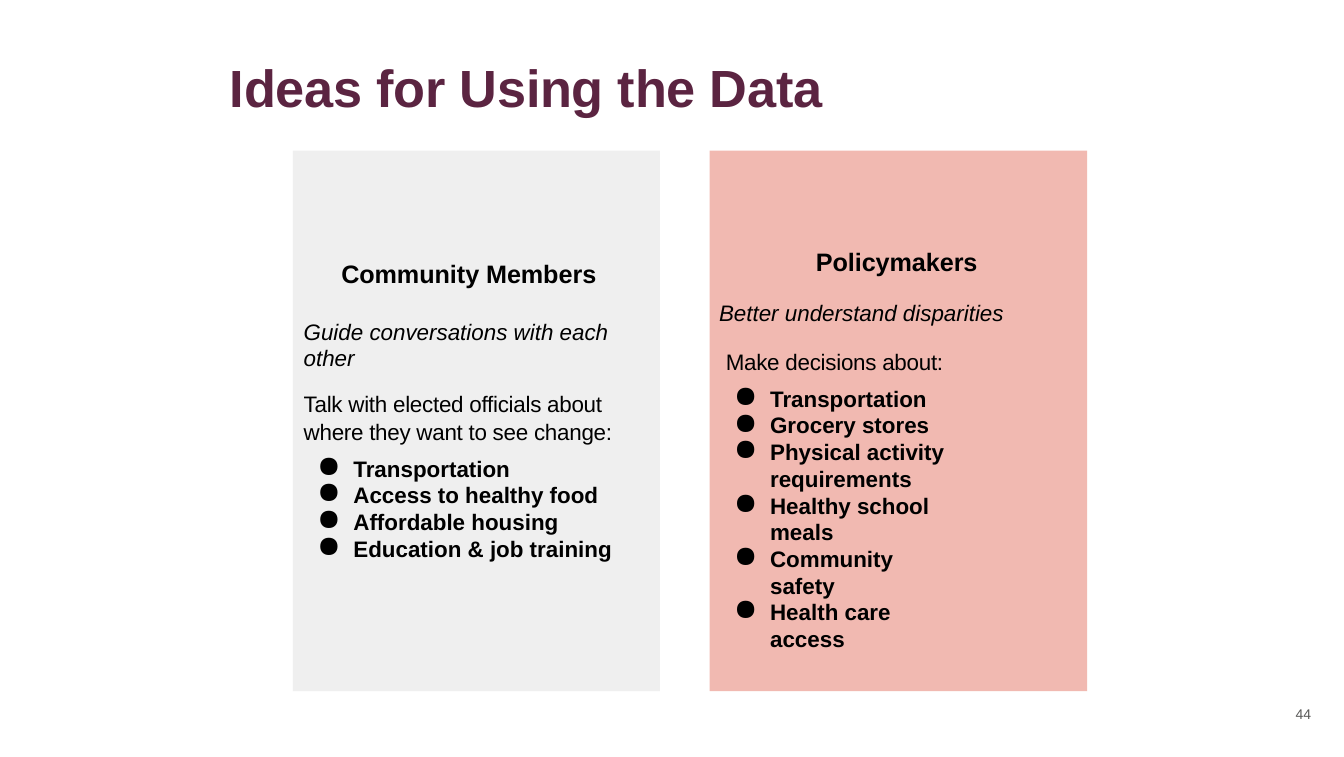
import pptx
import pptx.util
import pptx.dml.color
import pptx.enum.text
import pptx.enum.shapes
import pptx.oxml.ns
import lxml.etree

Inches, Pt = pptx.util.Inches, pptx.util.Pt
qn = pptx.oxml.ns.qn
COLORS = {"plum": "5B2441", "gray": "EFEFEF", "red": "DD503E", "black": "000000", "dim": "595958"}


def rgb(name):
    return pptx.dml.color.RGBColor.from_string(COLORS[name])


def style(par, size, color, bold=False, slant=False, track=0):
    par.alignment = pptx.enum.text.PP_ALIGN.LEFT
    for run in par.runs:
        font = run.font
        font.name, font.size, font.bold, font.italic = "Arial", Pt(size), bold, slant
        font.color.rgb = rgb(color)
        if track:
            run._r.get_or_add_rPr().set("spc", str(track))


deck = pptx.Presentation()
deck.slide_width, deck.slide_height = Inches(10), Inches(5.63)
slide = deck.slides.add_slide(deck.slide_layouts[5])

title = slide.shapes.title
title.left, title.top, title.width, title.height = Inches(1.7), Inches(0.41), Inches(4.7), Inches(0.49)
number = slide.shapes.add_textbox(Inches(9.63), Inches(5.25), Inches(0.15), Inches(0.14))

for shape, text, size, color, bold, track in [
    (title, "Ideas for Using the Data", 28, "plum", True, -10),
    (number, "44", 7.5, "dim", False, 0),
]:
    frame = shape.text_frame
    frame.margin_left = Inches(0.01)
    frame.margin_right = frame.margin_top = frame.margin_bottom = 0
    frame.vertical_anchor = pptx.enum.text.MSO_ANCHOR.TOP
    frame.word_wrap = False
    frame.text = text
    style(frame.paragraphs[0], size, color, bold, track=track)

panels = [
    {
        "left": 2.18, "width": 2.73, "fill": "gray", "inset": 0.8,
        "head": ("Community Members", 0.36),
        "lead": ("Guide conversations with each\vother", 0.08, 16, 14.2),
        "body": ("Talk with elected officials about\vwhere they want to see change:", 0.08, 10.2, 1.01),
        "items": ["Transportation", "Access to healthy food", "Affordable housing",
                  "Education & job training"],
    },
    {
        "left": 5.28, "width": 2.81, "fill": "red", "alpha": 40, "inset": 0.71,
        "head": ("Policymakers", 0.79),
        "lead": ("Better understand disparities", 0.07, 12, 1),
        "body": ("Make decisions about:", 0.12, 12, 1),
        "items": ["Transportation", "Grocery stores", "Physical activity\vrequirements",
                  "Healthy school\vmeals", "Community\vsafety", "Health care\vaccess"],
    },
]

for panel in panels:
    box = slide.shapes.add_shape(pptx.enum.shapes.MSO_SHAPE.RECTANGLE, Inches(panel["left"]),
                                 Inches(1.12), Inches(panel["width"]), Inches(4.02))
    box.shadow.inherit = False
    box.line.fill.background()
    box.fill.solid()
    box.fill.fore_color.rgb = rgb(panel["fill"])
    if "alpha" in panel:
        tint = box._element.spPr.find(".//" + qn("a:srgbClr"))
        lxml.etree.SubElement(tint, qn("a:alpha")).set("val", str(panel["alpha"] * 1000))

    frame = box.text_frame
    frame.word_wrap = True
    frame.vertical_anchor = pptx.enum.text.MSO_ANCHOR.TOP
    frame.margin_left = frame.margin_right = frame.margin_bottom = 0
    frame.margin_top = Inches(panel["inset"])

    head = frame.paragraphs[0]
    head.text, indent = panel["head"]
    head._p.get_or_add_pPr().set("marL", str(Inches(indent)))
    style(head, 13.5, "black", bold=True)

    for key in ("lead", "body"):
        text, indent, before, line = panel[key]
        par = frame.add_paragraph()
        par.text = text
        par.space_before = Pt(before)
        par.line_spacing = Pt(line) if line > 3 else line
        par._p.get_or_add_pPr().set("marL", str(Inches(indent)))
        style(par, 12, "black", slant=key == "lead", track=-15 if key == "body" else 0)

    for index, item in enumerate(panel["items"]):
        par = frame.add_paragraph()
        par.text = item
        par.space_before = Pt(0 if index else 5.5)
        par.line_spacing = Pt(14.3)
        props = par._p.get_or_add_pPr()
        props.set("marL", str(Inches(0.45)))
        props.set("indent", str(Inches(-0.27)))
        lxml.etree.SubElement(props, qn("a:buSzPct")).set("val", "133000")
        lxml.etree.SubElement(props, qn("a:buChar")).set("char", "●")
        style(par, 12, "black", bold=True)

deck.save("out.pptx")
